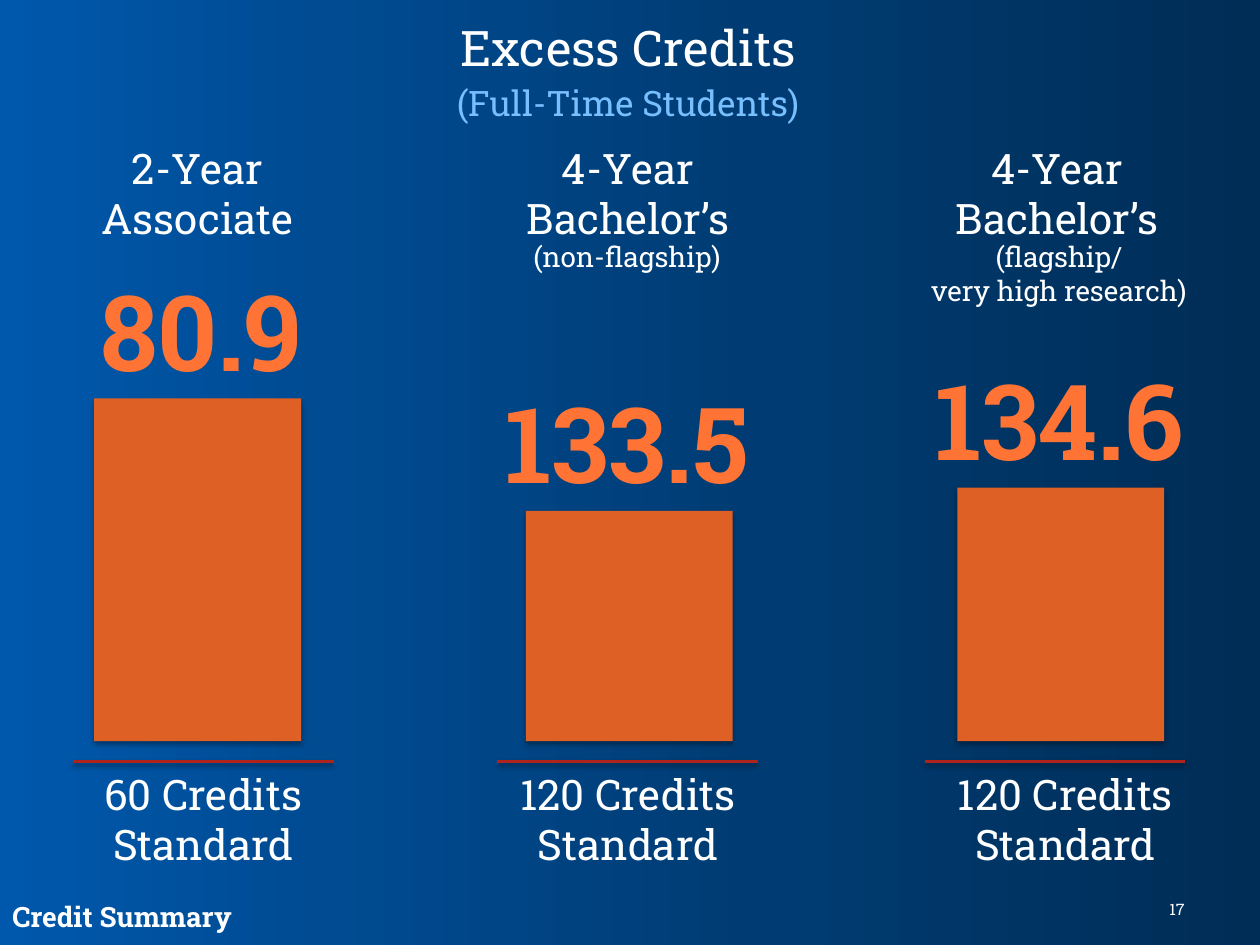
"""Build the Excess Credits slide: three degree columns of credits earned against the standard."""
from lxml import etree
from pptx import Presentation
from pptx.dml.color import RGBColor
from pptx.enum.shapes import MSO_CONNECTOR, MSO_SHAPE
from pptx.enum.text import MSO_ANCHOR, MSO_AUTO_SIZE, PP_ALIGN
from pptx.oxml.ns import qn
from pptx.util import Cm, Pt

LEFT, CENTER, RIGHT = PP_ALIGN.LEFT, PP_ALIGN.CENTER, PP_ALIGN.RIGHT
TOP, MIDDLE = MSO_ANCHOR.TOP, MSO_ANCHOR.MIDDLE
NO_AUTOFIT = MSO_AUTO_SIZE.NONE
RECTANGLE, STRAIGHT = MSO_SHAPE.RECTANGLE, MSO_CONNECTOR.STRAIGHT

FONT = "Roboto Slab"
WHITE = RGBColor(0xFF, 0xFF, 0xFF)
SKY = RGBColor(0x78, 0xBF, 0xFF)
ORANGE = RGBColor(0xDE, 0x60, 0x25)
BRIGHT_ORANGE = RGBColor(0xFF, 0x73, 0x34)
RED = RGBColor(0xAE, 0x24, 0x1C)
BACKDROP = [(0, "0058AC"), (26, "004B92"), (60, "003C73"), (100, "002D56")]

TITLE = "Excess Credits"
SUBTITLE = "(Full-Time Students)"
FOOTER = "Credit Summary"
PAGE = "17"
COLUMNS = [
    {"degree": ["2-Year", "Associate"], "note": [], "earned": "80.9",
     "standard": "60 Credits Standard", "bar_height": 6.91,
     "degree_center": 3.98, "earned_center": 4.06, "rule_center": 4.1, "standard_center": 4.1},
    {"degree": ["4-Year", "Bachelor’s"], "note": ["(non-flagship)"], "earned": "133.5",
     "standard": "120 Credits Standard", "bar_height": 4.64,
     "degree_center": 12.66, "earned_center": 12.64, "rule_center": 12.65, "standard_center": 12.66},
    {"degree": ["4-Year", "Bachelor’s"], "note": ["(flagship/", "very high research)"], "earned": "134.6",
     "standard": "120 Credits Standard", "bar_height": 5.11,
     "degree_center": 21.31, "earned_center": 21.35, "rule_center": 21.27, "standard_center": 21.48},
]

BAR_LEFT, BAR_PITCH, BAR_WIDTH, BAR_BOTTOM = 1.9, 8.7, 4.17, 14.94
EARNED_RISE = 2.79
RULE_TOP, RULE_WIDTH = 15.35, 5.25
LABEL_WIDTH = 7.2


def paint_backdrop(slide):
    fill = slide.background.fill
    fill.gradient()
    fill.gradient_angle = 0
    stops = slide._element.find(".//" + qn("a:gsLst"))
    for stop in list(stops):
        stops.remove(stop)
    for percent, color in BACKDROP:
        stop = etree.SubElement(stops, qn("a:gs"), pos=str(percent * 1000))
        etree.SubElement(stop, qn("a:srgbClr"), val=color)


def cast_shadow(shape, opacity, distance):
    effects = etree.SubElement(shape._element.spPr, qn("a:effectLst"))
    shadow = etree.SubElement(effects, qn("a:outerShdw"), blurRad=str(Pt(3.1)),
                              dist=str(Pt(distance)), dir="5400000", rotWithShape="0")
    color = etree.SubElement(shadow, qn("a:srgbClr"), val="000000")
    etree.SubElement(color, qn("a:alpha"), val=str(opacity * 1000))


def write(frame, lines, size, color=WHITE, align=CENTER, bold=False, anchor=TOP):
    frame.word_wrap = True
    frame.auto_size = NO_AUTOFIT
    frame.vertical_anchor = anchor
    for index, line in enumerate(lines):
        paragraph = frame.paragraphs[0] if index == 0 else frame.add_paragraph()
        paragraph.alignment = align
        font = paragraph.font
        font.name, font.size, font.bold = FONT, Pt(size), bold
        font.color.rgb = color
        paragraph.add_run().text = line


def add_label(slide, lines, left, top, width, height, size, **style):
    label = slide.shapes.add_textbox(Cm(left), Cm(top), Cm(width), Cm(height))
    write(label.text_frame, lines, size, **style)


def add_centered(slide, lines, center, top, height, size, **style):
    add_label(slide, lines, center - LABEL_WIDTH / 2, top, LABEL_WIDTH, height, size, **style)


def add_column(slide, index, column):
    bar_top = BAR_BOTTOM - column["bar_height"]
    bar = slide.shapes.add_shape(RECTANGLE, Cm(BAR_LEFT + index * BAR_PITCH), Cm(bar_top),
                                 Cm(BAR_WIDTH), Cm(column["bar_height"]))
    bar.fill.solid()
    bar.fill.fore_color.rgb = ORANGE
    bar.line.fill.background()
    cast_shadow(bar, 35, 1.8)

    rule_left = column["rule_center"] - RULE_WIDTH / 2
    rule = slide.shapes.add_connector(STRAIGHT, Cm(rule_left), Cm(RULE_TOP),
                                      Cm(rule_left + RULE_WIDTH), Cm(RULE_TOP))
    rule.line.color.rgb = RED
    rule.line.width = Pt(2)
    cast_shadow(rule, 38, 1.6)

    add_centered(slide, column["degree"], column["degree_center"], 2.74, 2.31, 24)
    if column["note"]:
        add_centered(slide, column["note"], column["earned_center"], 4.71,
                     0.25 + 0.69 * len(column["note"]), 16)
    add_centered(slide, [column["earned"]], column["earned_center"], bar_top - EARNED_RISE,
                 2.82, 60, color=BRIGHT_ORANGE, bold=True)
    add_centered(slide, [column["standard"]], column["standard_center"], 15.36, 2.31, 24)


def main():
    deck = Presentation()
    deck.slide_width, deck.slide_height = Cm(25.4), Cm(19.05)
    slide = deck.slides.add_slide(deck.slide_layouts[5])
    paint_backdrop(slide)

    title = slide.shapes.title
    title.left, title.top, title.width, title.height = Cm(0.5), Cm(0.23), Cm(24.33), Cm(1.45)
    write(title.text_frame, [TITLE], 28)
    add_label(slide, [SUBTITLE], 0.5, 1.52, 24.33, 1.12, 20, color=SKY)
    add_label(slide, [FOOTER], 0, 18, 11.05, 0.94, 16, align=LEFT, bold=True)
    add_label(slide, [PAGE], 18.21, 18, 5.92, 0.66, 9, align=RIGHT, anchor=MIDDLE)
    for index, column in enumerate(COLUMNS):
        add_column(slide, index, column)
    deck.save("out.pptx")


if __name__ == "__main__":
    main()
